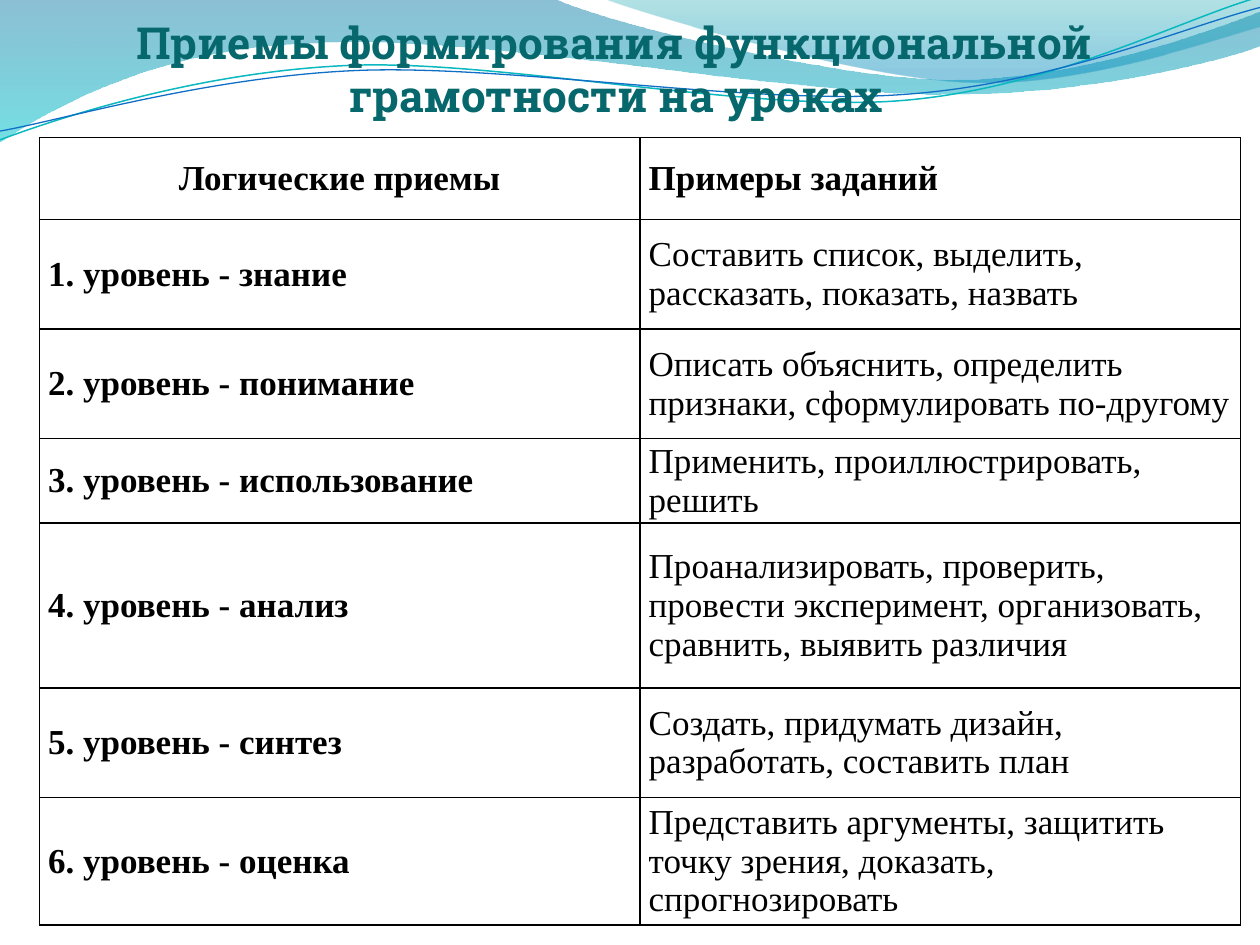
from math import cos, radians, sin

from lxml.etree import SubElement
from pptx import Presentation
from pptx.dml.color import RGBColor
from pptx.enum.text import MSO_ANCHOR, MSO_AUTO_SIZE, PP_ALIGN
from pptx.oxml import parse_xml
from pptx.oxml.ns import nsdecls, qn
from pptx.util import Pt

BLACK = RGBColor(0x00, 0x00, 0x00)
TITLE_TEAL = RGBColor(0x06, 0x68, 0x6C)
DEEP_BLUE = RGBColor(0x00, 0x74, 0xA1)
CYAN = RGBColor(0x00, 0xC6, 0xCF)
TEAL = RGBColor(0x00, 0xA1, 0xA9)
BLUE = RGBColor(0x00, 0x8B, 0xBF)
LINE_CYAN = RGBColor(0x0A, 0xB8, 0xBF)
LINE_BLUE = RGBColor(0x0F, 0x6F, 0xC6)

TITLE_FONT = "Roboto Slab"
TABLE_FONT = "Times New Roman"
LINE_TILT = 357.3

# Wave outlines in points: a pair is a corner, a six-tuple is a Bézier curve
LEFT_WAVE = [
    (0, 0), (316.8, -0.7),
    (342.7, 12.2, 478.1, 45.4, 545.8, 45.4),
    (614.2, 45.4, 689.8, 18.7, 720, 6.5),
    (720.7, 25.9),
    (707.8, 31.7, 626.4, 54.7, 537.1, 54),
    (447.8, 54, 275, 20.2, 185, 24.5),
    (92.9, 25.9, 33.1, 59.8, -0.7, 81.4),
]
RIGHT_WAVE = [
    (344.9, -0.7),
    (366.5, 7.9, 491, 44.6, 553.7, 46.8),
    (616.3, 49.7, 691.9, 23, 720, 15.1),
    (720, 0),
]
CYAN_LINE = [
    (0, 79.9),
    (34.6, 67, 113.8, 41, 199.4, 37.4),
    (284.4, 33.8, 427, 64.1, 513.4, 57.6),
    (599.8, 51.1, 675.4, 10.8, 718.6, -1.4),
]
BLUE_LINE = [
    (0, 74.9),
    (33.8, 69.1, 118.1, 43.9, 203.8, 40.3),
    (290.2, 36.7, 429.8, 60.5, 516.2, 54),
    (601.9, 48.2, 677.5, 15.1, 720, 4.3),
]

ROW_HEIGHTS = (46.8, 62.6, 62.6, 48.3, 94.2, 62.6, 72.9)
HEADINGS = ("Логические приемы", "Примеры заданий")
LEVELS = [
    ("знание", "Составить список, выделить, рассказать, показать, назвать"),
    ("понимание", "Описать объяснить, определить признаки, сформулировать по-другому"),
    ("использование", "Применить, проиллюстрировать, решить"),
    ("анализ", "Проанализировать, проверить, провести эксперимент, "
               "организовать, сравнить, выявить различия"),
    ("синтез", "Создать, придумать дизайн, разработать, составить план"),
    ("оценка", "Представить аргументы, защитить точку зрения, доказать, "
               "спрогнозировать"),
]


def level_point(point, center):
    """Turn a point of a tilted line back to where it lies untilted."""
    angle = radians(360 - LINE_TILT)
    x, y = point[0] - center[0], point[1] - center[1]
    return (center[0] + x * cos(angle) - y * sin(angle),
            center[1] + x * sin(angle) + y * cos(angle))


def add_outline(slide, box, outline, center=None):
    """Add a closed outline, or an open tilted one when a center is given."""
    points = [part[i:i + 2] for part in outline for i in range(0, len(part), 2)]
    if center:
        points = [level_point(point, center) for point in points]
    points = [(Pt(box[0] + x), Pt(box[1] + y)) for x, y in points]
    builder = slide.shapes.build_freeform(*points[0])
    builder.add_line_segments(points[1:], close=not center)
    shape = builder.convert_to_shape()
    shape.shadow.inherit = False
    # Join the three points of each curve into one Bézier segment
    segments = iter(list(shape.element.iter(qn("a:lnTo"))))
    for part in outline[1:]:
        segment = next(segments)
        if len(part) == 6:
            segment.addprevious(parse_xml(f'<a:cubicBezTo {nsdecls("a")}/>'))
            curve = segment.getprevious()
            for control in (segment, next(segments), next(segments)):
                curve.append(control[0])
                control.getparent().remove(control)
    return shape


def add_wave(slide, box, outline, stops):
    shape = add_outline(slide, box, outline)
    shape.line.fill.background()
    shape.fill.gradient()
    shape.fill.gradient_angle = 270
    for stop, (position, color, _) in zip(shape.fill.gradient_stops, stops):
        stop.position = position
        stop.color.rgb = color
    # Transparency of each stop
    colors = shape.element.spPr.iter(qn("a:srgbClr"))
    for color_element, (_, _, opacity) in zip(colors, stops):
        SubElement(color_element, qn("a:alpha"), val=str(opacity * 1000))


def add_wave_line(slide, box, outline, center, color, width):
    shape = add_outline(slide, box, outline, center)
    shape.rotation = LINE_TILT
    shape.fill.background()
    shape.line.color.rgb = color
    shape.line.width = Pt(width)


def add_waves(slide, box):
    add_wave(slide, box, LEFT_WAVE, [(0, DEEP_BLUE, 45), (1, CYAN, 55)])
    add_wave(slide, box, RIGHT_WAVE, [(0, TEAL, 30), (0.8, BLUE, 45)])
    add_wave_line(slide, box, CYAN_LINE, (359.3, 41.4), LINE_CYAN, 0.85)
    add_wave_line(slide, box, BLUE_LINE, (359.6, 42.5), LINE_BLUE, 0.75)


def add_title(slide, box):
    title = slide.shapes.title
    title.left, title.top, title.width, title.height = map(Pt, box)
    # Bring the title in front of the waves
    title.element.getparent().append(title.element)
    frame = title.text_frame
    frame.text = "Приемы формирования функциональной грамотности на уроках"
    frame.word_wrap = True
    frame.auto_size = MSO_AUTO_SIZE.NONE
    frame.vertical_anchor = MSO_ANCHOR.BOTTOM
    frame.margin_left = frame.margin_right = frame.margin_bottom = 0
    frame.margin_top = Pt(3.6)
    paragraph = frame.paragraphs[0]
    paragraph.alignment = PP_ALIGN.CENTER
    paragraph.font.name = TITLE_FONT
    paragraph.font.size = Pt(25.2)
    paragraph.font.bold = True
    paragraph.font.color.rgb = TITLE_TEAL


def set_borders(cell):
    properties = cell._tc.get_or_add_tcPr()
    for side in ("lnL", "lnR", "lnT", "lnB"):
        properties.append(parse_xml(
            f'<a:{side} {nsdecls("a")} w="{Pt(1)}"><a:solidFill>'
            f'<a:srgbClr val="{BLACK}"/></a:solidFill></a:{side}>'))


def fill_cell(cell, text, alignment, bold):
    set_borders(cell)
    cell.fill.background()
    cell.vertical_anchor = MSO_ANCHOR.MIDDLE
    cell.margin_left = cell.margin_right = Pt(5)
    cell.margin_top = cell.margin_bottom = 0
    cell.text = text
    paragraph = cell.text_frame.paragraphs[0]
    paragraph.alignment = alignment
    paragraph.font.name = TABLE_FONT
    paragraph.font.size = Pt(20)
    paragraph.font.bold = bold
    paragraph.font.color.rgb = BLACK
    if alignment == PP_ALIGN.JUSTIFY:
        # Hanging indent of the numbered levels
        properties = paragraph._p.get_or_add_pPr()
        properties.set("marL", str(Pt(36)))
        properties.set("indent", str(-Pt(36)))


def add_levels_table(slide, box):
    table = slide.shapes.add_table(len(LEVELS) + 1, 2, *map(Pt, box)).table
    table.first_row = table.horz_banding = False
    for column in table.columns:
        column.width = Pt(box[2] / 2)
    for row, height in zip(table.rows, ROW_HEIGHTS):
        row.height = Pt(height)
    # Heading row
    fill_cell(table.cell(0, 0), HEADINGS[0], PP_ALIGN.CENTER, True)
    fill_cell(table.cell(0, 1), HEADINGS[1], PP_ALIGN.LEFT, True)
    # One row for each level
    for number, (level, tasks) in enumerate(LEVELS, 1):
        fill_cell(table.cell(number, 0), f"{number}. уровень - {level}",
                  PP_ALIGN.JUSTIFY, True)
        fill_cell(table.cell(number, 1), tasks, PP_ALIGN.LEFT, False)


def main():
    presentation = Presentation()
    presentation.slide_width, presentation.slide_height = Pt(720), Pt(540)
    slide = presentation.slides.add_slide(presentation.slide_layouts[5])
    add_waves(slide, (0, 0, 720, 82))
    add_title(slide, (16.5, 16.5, 669.6, 52.6))
    add_levels_table(slide, (22.5, 78.6, 686.4, 450))
    presentation.save("out.pptx")


if __name__ == "__main__":
    main()
